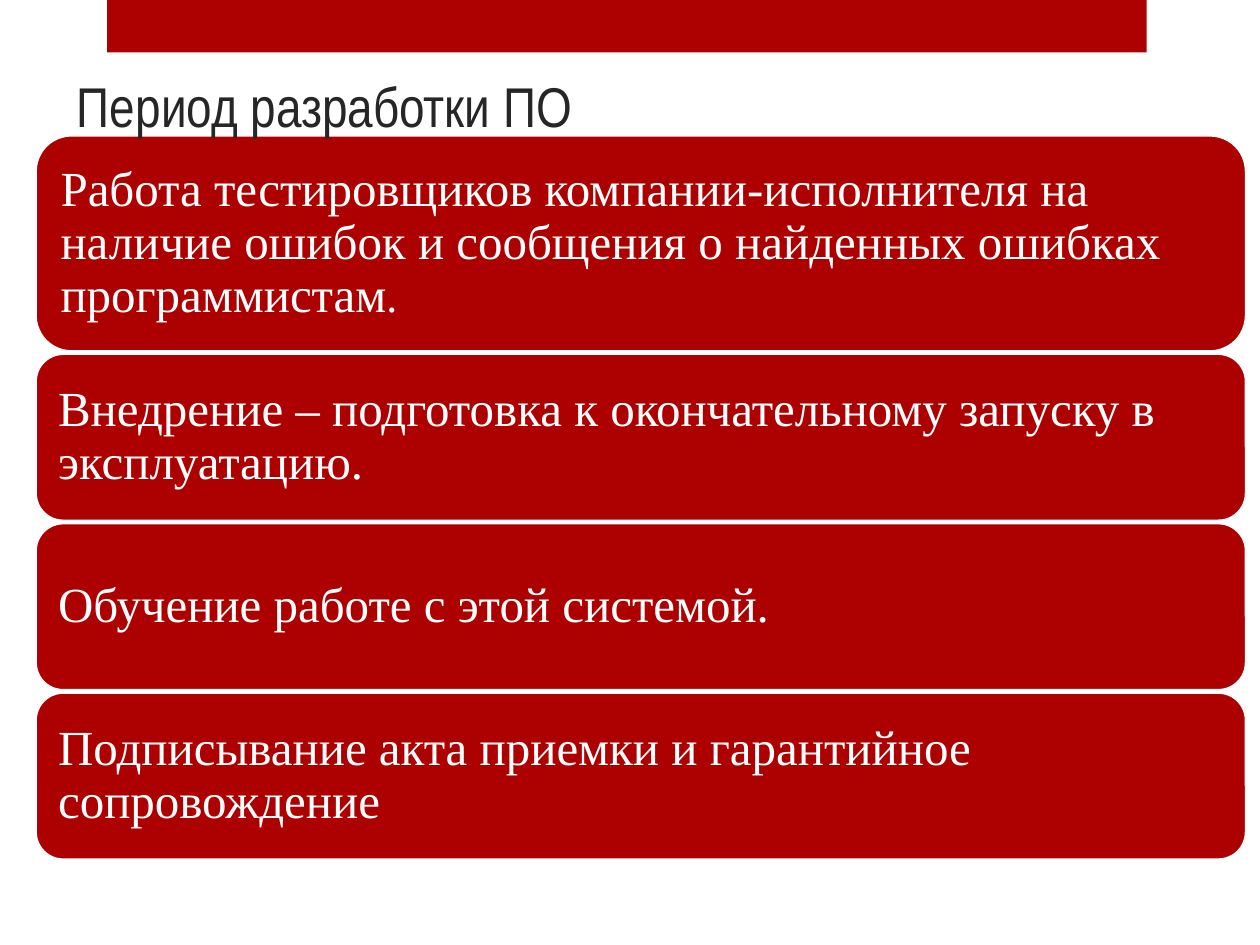
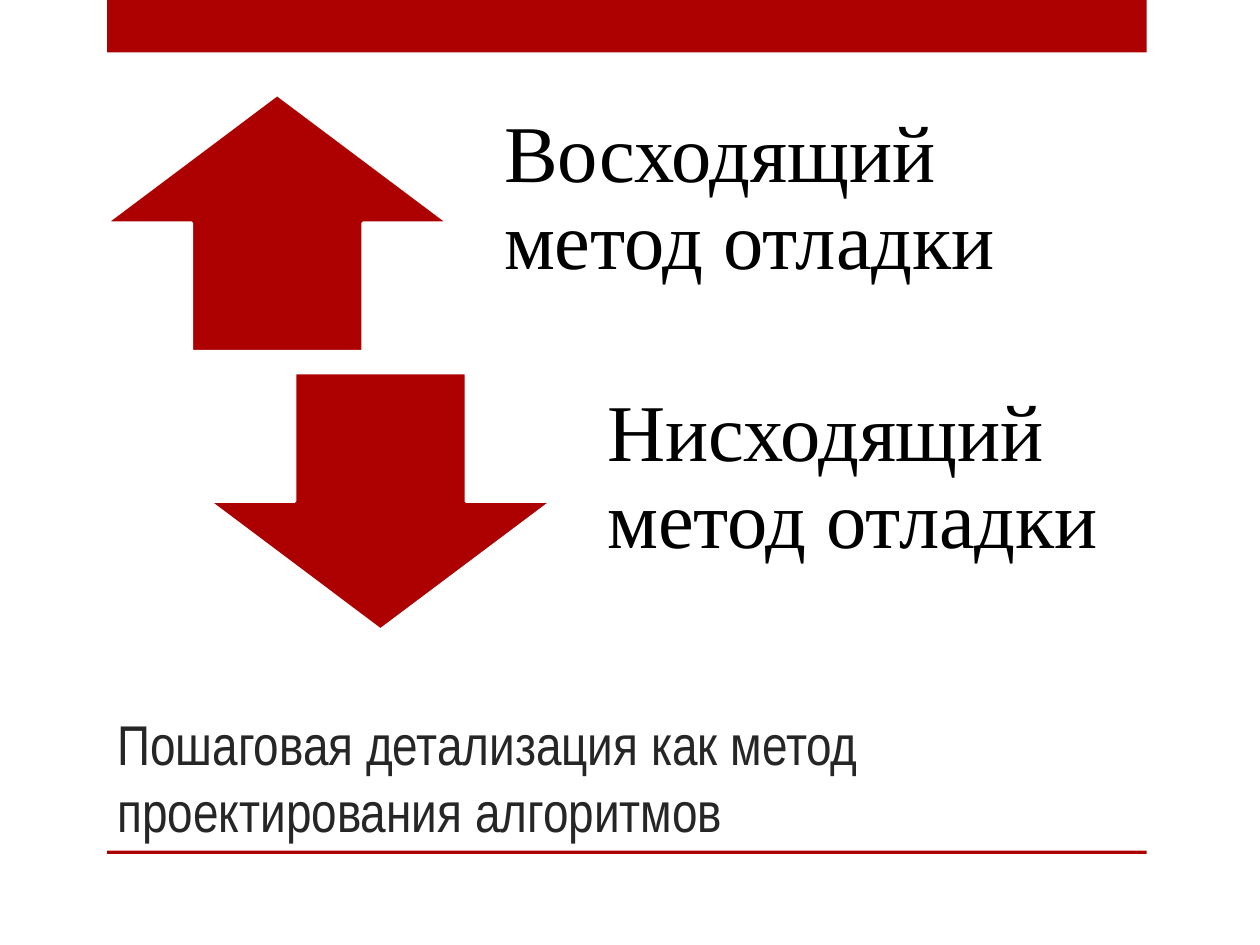
from dataclasses import dataclass

from pptx import Presentation
from pptx.dml.color import RGBColor
from pptx.enum.shapes import MSO_SHAPE as Preset
from pptx.enum.text import MSO_ANCHOR as Anchor, MSO_AUTO_SIZE as AutoSize, PP_ALIGN as Align
from pptx.util import Pt

PERIOD_TITLE = "Период разработки ПО"
# Each stage: text runs with their sizes, then the card height
STAGES = [
    ([("Работа тестировщиков компании-исполнителя на наличие ошибок "
       "и сообщения о найденных ошибках программистам", 28), (".", 25)], 123.8),
    ([("Внедрение – подготовка к окончательному запуску в эксплуатацию.", 28)], 95.8),
    ([("Обучение работе с этой системой.", 28)], 95.8),
    ([("Подписывание акта приемки и гарантийное сопровождение", 28)], 95.8),
]

METHODS_TITLE = "Пошаговая детализация как метод проектирования алгоритмов"
METHODS = [
    (Preset.UP_ARROW, "Восходящий метод отладки"),
    (Preset.DOWN_ARROW, "Нисходящий метод отладки"),
]


@dataclass(frozen=True)
class Theme:
    red: RGBColor = RGBColor(0xAD, 0x01, 0x01)
    white: RGBColor = RGBColor(0xFF, 0xFF, 0xFF)
    black: RGBColor = RGBColor(0, 0, 0)
    title_color: RGBColor = RGBColor(0x26, 0x26, 0x26)
    title_font: str = "Arial Narrow"
    body_font: str = "Times New Roman"
    title_size: float = 32
    method_size: float = 46
    outline: float = 1.75


THEME = Theme()
BAND_LEFT, BAND_WIDTH = 61.2, 594
CARD_LEFT, CARD_TOP, CARD_WIDTH, CARD_GAP = 20.2, 77.2, 692, 1
ARROW_LEFT, ARROW_TOP, ARROW_WIDTH, ARROW_HEIGHT = 60.5, 54, 195.8, 146.9
METHOD_STEP_X, METHOD_STEP_Y = 59, 159.1
LABEL_OFFSET, LABEL_WIDTH = 201.6, 332.6


def write(shape, runs, *, font=THEME.body_font, color=THEME.white,
          anchor=Anchor.MIDDLE, spacing=0.9, insets=(8.4, 8.4, 8.4, 8.4)):
    """Fill a shape with one left-aligned paragraph of (text, size) runs."""
    frame = shape.text_frame
    frame.word_wrap = True
    frame.auto_size = AutoSize.NONE
    frame.vertical_anchor = anchor
    (frame.margin_left, frame.margin_top,
     frame.margin_right, frame.margin_bottom) = map(Pt, insets)
    paragraph = frame.paragraphs[0]
    paragraph.alignment = Align.LEFT
    paragraph.line_spacing = spacing
    for text, size in runs:
        run = paragraph.add_run()
        run.text = text
        run.font.name = font
        run.font.size = Pt(size)
        run.font.color.rgb = color


def add_red_shape(slide, preset, box, outlined=True):
    shape = slide.shapes.add_shape(preset, *map(Pt, box))
    shape.shadow.inherit = False
    shape.fill.solid()
    shape.fill.fore_color.rgb = THEME.red
    if outlined:
        shape.line.color.rgb = THEME.white
        shape.line.width = Pt(THEME.outline)
    else:
        shape.line.fill.background()
    return shape


def add_band(slide, top, height):
    add_red_shape(slide, Preset.RECTANGLE, (BAND_LEFT, top, BAND_WIDTH, height), outlined=False)


def add_titled_slide(presentation, title_text, title_box):
    slide = presentation.slides.add_slide(presentation.slide_layouts.get_by_name("Title Only"))
    add_band(slide, 0, 30)
    title = slide.shapes.title
    title.left, title.top, title.width, title.height = map(Pt, title_box)
    write(title, [(title_text, THEME.title_size)], font=THEME.title_font,
          color=THEME.title_color, anchor=Anchor.BOTTOM, spacing=1.0,
          insets=(7.2, 3.6, 7.2, 3.6))
    return slide


def build_period_slide(presentation):
    slide = add_titled_slide(presentation, PERIOD_TITLE, (36.7, 31.7, 663, 51))
    top = CARD_TOP
    for runs, height in STAGES:
        card = add_red_shape(slide, Preset.ROUNDED_RECTANGLE,
                             (CARD_LEFT, top, CARD_WIDTH, height))
        write(card, runs)
        top += height + CARD_GAP
    # The title's descenders lie over the first card
    title = slide.shapes.title.element
    title.getparent().append(title)


def build_methods_slide(presentation):
    slide = add_titled_slide(presentation, METHODS_TITLE, (59.8, 388.8, 534, 97.2))
    add_band(slide, 486, 2)
    for index, (arrow, text) in enumerate(METHODS):
        left = ARROW_LEFT + index * METHOD_STEP_X
        top = ARROW_TOP + index * METHOD_STEP_Y
        add_red_shape(slide, arrow, (left, top, ARROW_WIDTH, ARROW_HEIGHT))
        label = slide.shapes.add_textbox(
            *map(Pt, (left + LABEL_OFFSET, top, LABEL_WIDTH, ARROW_HEIGHT)))
        write(label, [(text, THEME.method_size)], color=THEME.black,
              insets=(25.9, 0, 25.9, 25.9))


def main():
    presentation = Presentation()
    presentation.slide_width, presentation.slide_height = Pt(720), Pt(540)
    build_period_slide(presentation)
    build_methods_slide(presentation)
    presentation.save("out.pptx")


if __name__ == "__main__":
    main()
